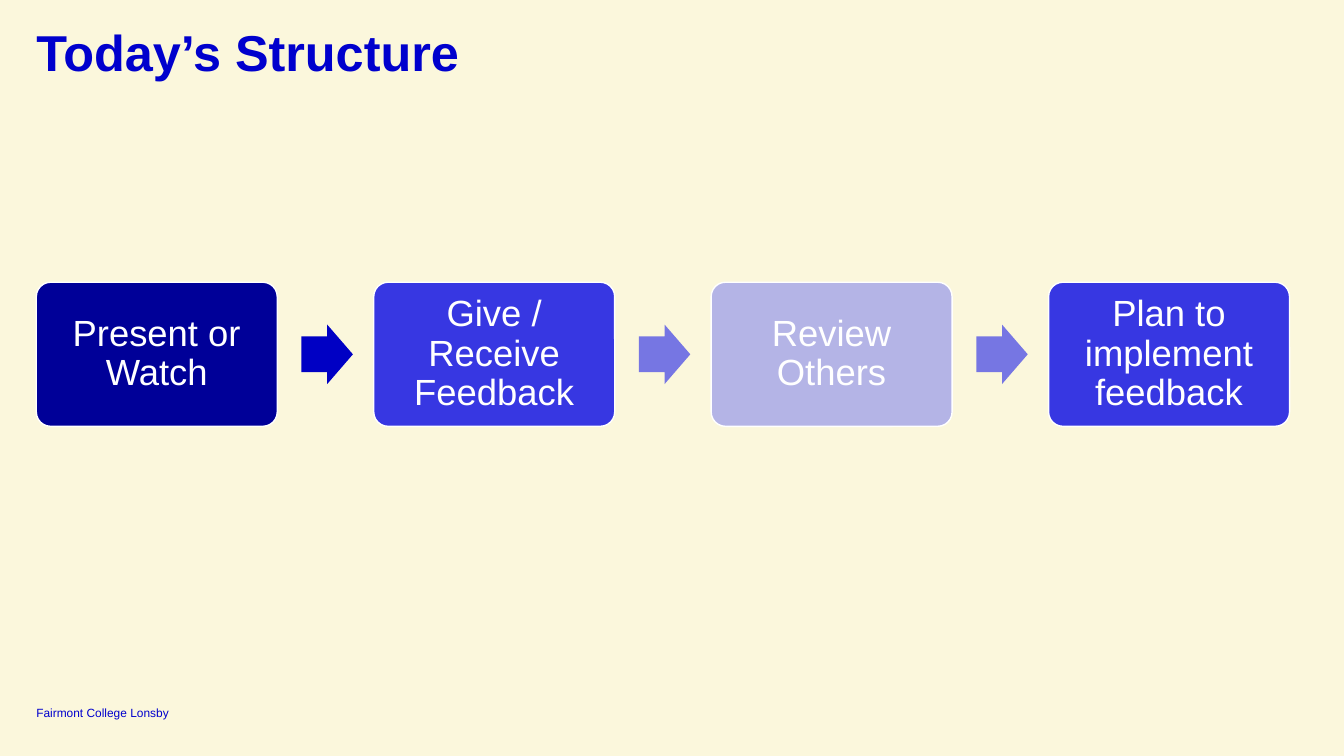
from pptx import Presentation
from pptx import util as u
from pptx.dml.color import RGBColor
from pptx.enum import shapes, text

CREAM = RGBColor(0xFB, 0xF7, 0xDC)
BLUE = RGBColor(0x00, 0x00, 0xCD)
WHITE = RGBColor(0xFF, 0xFF, 0xFF)
NAVY = RGBColor(0x00, 0x00, 0x98)
DEEP_BLUE = RGBColor(0x00, 0x00, 0xC4)
BRIGHT_BLUE = RGBColor(0x37, 0x37, 0xE2)
SOFT_BLUE = RGBColor(0x76, 0x76, 0xE3)
PALE_BLUE = RGBColor(0xB4, 0xB4, 0xE6)

STEPS = [
    ("Present or Watch", NAVY),
    ("Give / Receive Feedback", BRIGHT_BLUE),
    ("Review Others", PALE_BLUE),
    ("Plan to implement feedback", BRIGHT_BLUE),
]
ARROW_COLOURS = [DEEP_BLUE, SOFT_BLUE, SOFT_BLUE]


def write(shape, wording, size, colour, anchor, align, inset=0, bold=False, spacing=1.0):
    """Fill a shape with one formatted paragraph."""
    frame = shape.text_frame
    frame.text = wording
    frame.word_wrap = True
    frame.auto_size = text.MSO_AUTO_SIZE.NONE
    frame.vertical_anchor = anchor
    frame.margin_left = frame.margin_right = u.Inches(inset)
    frame.margin_top = frame.margin_bottom = u.Inches(inset)
    para = frame.paragraphs[0]
    para.alignment = align
    para.line_spacing = spacing
    font = para.runs[0].font
    font.name, font.size, font.bold = "Arial", u.Pt(size), bold
    font.color.rgb = colour


def add_block(page, kind, left, top, width, height, colour):
    """Add a flat, filled preset shape without an outline."""
    box = page.shapes.add_shape(kind, left, top, width, height)
    box.shadow.inherit = False
    box.fill.solid()
    box.fill.fore_color.rgb = colour
    box.line.fill.background()
    return box


def add_title(page, left, top, width, height):
    """Place the slide title in the given box."""
    title = page.shapes.title
    title.left, title.top, title.width, title.height = left, top, width, height
    write(title, "Today’s Structure", 36, BLUE, text.MSO_ANCHOR.TOP,
          text.PP_ALIGN.LEFT, bold=True, spacing=0.9)


def add_footer(page, left, top, width, height):
    """Place the institution name in the given box."""
    footer = page.shapes.add_textbox(left, top, width, height)
    write(footer, "Fairmont College Lonsby", 8.5, BLUE,
          text.MSO_ANCHOR.BOTTOM, text.PP_ALIGN.LEFT)


def add_process(page, left, top, width, height):
    """Spread the steps evenly over the box, with an arrow in each gap."""
    step_width = u.Inches(2.39)
    arrow_width, arrow_height = u.Inches(0.51), u.Inches(0.59)
    pitch = (width - step_width) // (len(STEPS) - 1)
    for index, (wording, colour) in enumerate(STEPS):
        step = add_block(page, shapes.MSO_SHAPE.ROUNDED_RECTANGLE,
                         left + index * pitch, top, step_width, height, colour)
        step.adjustments[0] = 0.1
        step.line.color.rgb = WHITE
        step.line.width = u.Pt(1)
        write(step, wording, 26, WHITE, text.MSO_ANCHOR.MIDDLE,
              text.PP_ALIGN.CENTER, inset=0.15, spacing=0.9)
    for index, colour in enumerate(ARROW_COLOURS):
        arrow = add_block(page, shapes.MSO_SHAPE.RIGHT_ARROW,
                          left + index * pitch + step_width + u.Inches(0.24),
                          top + (height - arrow_height) // 2,
                          arrow_width, arrow_height, colour)
        arrow.adjustments[0] = 0.6
        arrow.adjustments[1] = 0.5


def main():
    """Build the deck and save it."""
    deck = Presentation()
    deck.slide_width, deck.slide_height = u.Inches(13.33), u.Inches(7.5)
    page = deck.slides.add_slide(deck.slide_layouts[5])
    page.background.fill.solid()
    page.background.fill.fore_color.rgb = CREAM
    left = u.Inches(0.36)
    add_title(page, left, u.Inches(0.28), u.Inches(12.62), u.Inches(0.41))
    add_process(page, left, u.Inches(2.8), u.Inches(12.43), u.Inches(1.43))
    add_footer(page, left, u.Inches(6.99), u.Inches(1.55), u.Inches(0.15))
    deck.save("out.pptx")


if __name__ == "__main__":
    main()
